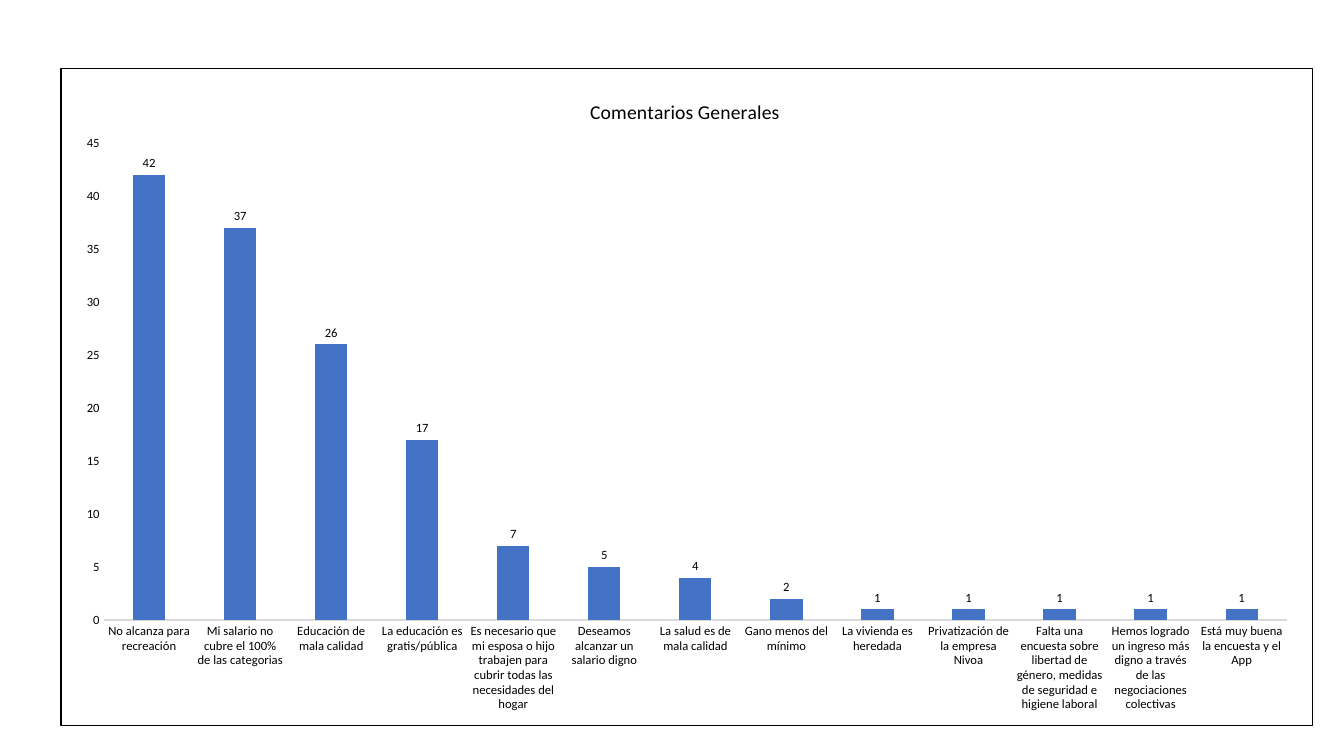
from pptx import Presentation
from pptx.chart.data import CategoryChartData
from pptx.dml.color import RGBColor
from pptx.enum.chart import XL_CHART_TYPE as ChartType
from pptx.enum.chart import XL_LABEL_POSITION as LabelPosition
from pptx.enum.chart import XL_TICK_MARK as TickMark
from pptx.oxml import parse_xml
from pptx.oxml.ns import nsdecls, qn
from pptx.util import Inches, Pt

FONT = "Calibri"
BLACK, BLUE, GREY = "000000", "4472C4", "D9D9D9"
COMMENTS = [
    ("No alcanza para recreación", 42),
    ("Mi salario no cubre el 100% de las categorias", 37),
    ("Educación de mala calidad", 26),
    ("La educación es gratis/pública", 17),
    ("Es necesario que mi esposa o hijo trabajen para cubrir todas las "
     "necesidades del hogar", 7),
    ("Deseamos alcanzar un salario digno", 5),
    ("La salud es de mala calidad", 4),
    ("Gano menos del mínimo", 2),
    ("La vivienda es heredada", 1),
    ("Privatización de la empresa Nivoa", 1),
    ("Falta una encuesta sobre libertad de género, medidas de seguridad "
     "e higiene laboral", 1),
    ("Hemos logrado un ingreso más digno a través de las negociaciones "
     "colectivas", 1),
    ("Está muy buena la encuesta y el App", 1),
]


def color(hex_code):
    return RGBColor.from_string(hex_code)


def style_font(font, size):
    font.name = FONT
    font.size = Pt(size)
    font.bold = False
    font.color.rgb = color(BLACK)


def manual_layout(target="", **fractions):
    """Return a c:layout element; fractions are shares of the chart frame."""
    inner = f'<c:layoutTarget val="{target}"/>' if target else ""
    inner += '<c:xMode val="edge"/><c:yMode val="edge"/>'
    inner += "".join(f'<c:{key} val="{share}"/>' for key, share in fractions.items())
    return parse_xml(f'<c:layout {nsdecls("c")}><c:manualLayout>{inner}'
                     "</c:manualLayout></c:layout>")


def place(part, index, layout):
    for old_layout in part.findall(qn("c:layout")):
        part.remove(old_layout)
    part.insert(index, layout)


def add_border(chart):
    border = parse_xml(
        f'<c:spPr {nsdecls("c", "a")}><a:solidFill><a:srgbClr val="FFFFFF"/>'
        f'</a:solidFill><a:ln w="{Pt(0.75)}"><a:solidFill><a:srgbClr val="{BLACK}"/>'
        "</a:solidFill></a:ln></c:spPr>")
    chart.element.find(qn("c:chart")).addnext(border)


def format_title(chart):
    chart.has_title = True
    heading = chart.chart_title.text_frame.paragraphs[0].add_run()
    heading.text = "Comentarios Generales"
    style_font(heading.font, 14)
    title = chart.element.find(qn("c:chart")).find(qn("c:title"))
    place(title, 1, manual_layout(x=0.42, y=0.04))


def format_axes(chart):
    for axis in (chart.category_axis, chart.value_axis):
        axis.major_tick_mark = axis.minor_tick_mark = TickMark.NONE
        axis.has_major_gridlines = False
        style_font(axis.tick_labels.font, 9)
    baseline = chart.category_axis.format.line
    baseline.color.rgb = color(GREY)
    baseline.width = Pt(0.75)
    counts = chart.value_axis
    counts.format.line.fill.background()
    counts.minimum_scale, counts.maximum_scale, counts.major_unit = 0, 45, 5


def format_columns(chart):
    plot = chart.plots[0]
    plot.gap_width = 182
    plot.vary_by_categories = False
    fill = plot.series[0].format.fill
    fill.solid()
    fill.fore_color.rgb = color(BLUE)
    labels = plot.series[0].data_labels
    labels.show_value = True
    labels.position = LabelPosition.OUTSIDE_END
    style_font(labels.font, 9)


def add_comments_chart(slide, left, top, width, height):
    comments = CategoryChartData()
    comments.categories = [comment for comment, _ in COMMENTS]
    comments.add_series("Series 1", [count for _, count in COMMENTS])
    chart = slide.shapes.add_chart(
        ChartType.COLUMN_CLUSTERED, Inches(left), Inches(top),
        Inches(width), Inches(height), comments).chart
    chart.has_legend = False
    style_font(chart.font, 10)
    add_border(chart)
    format_title(chart)
    format_axes(chart)
    format_columns(chart)
    plot_area = chart.element.find(qn("c:chart")).find(qn("c:plotArea"))
    place(plot_area, 0, manual_layout("inner", x=0.034, y=0.114, w=0.946, h=0.726))


def main():
    deck = Presentation()
    deck.slide_width, deck.slide_height = Inches(13.33), Inches(7.5)
    slide = deck.slides.add_slide(deck.slide_layouts[6])
    add_comments_chart(slide, 0.6, 0.67, 12.42, 6.53)
    deck.save("out.pptx")


if __name__ == "__main__":
    main()
